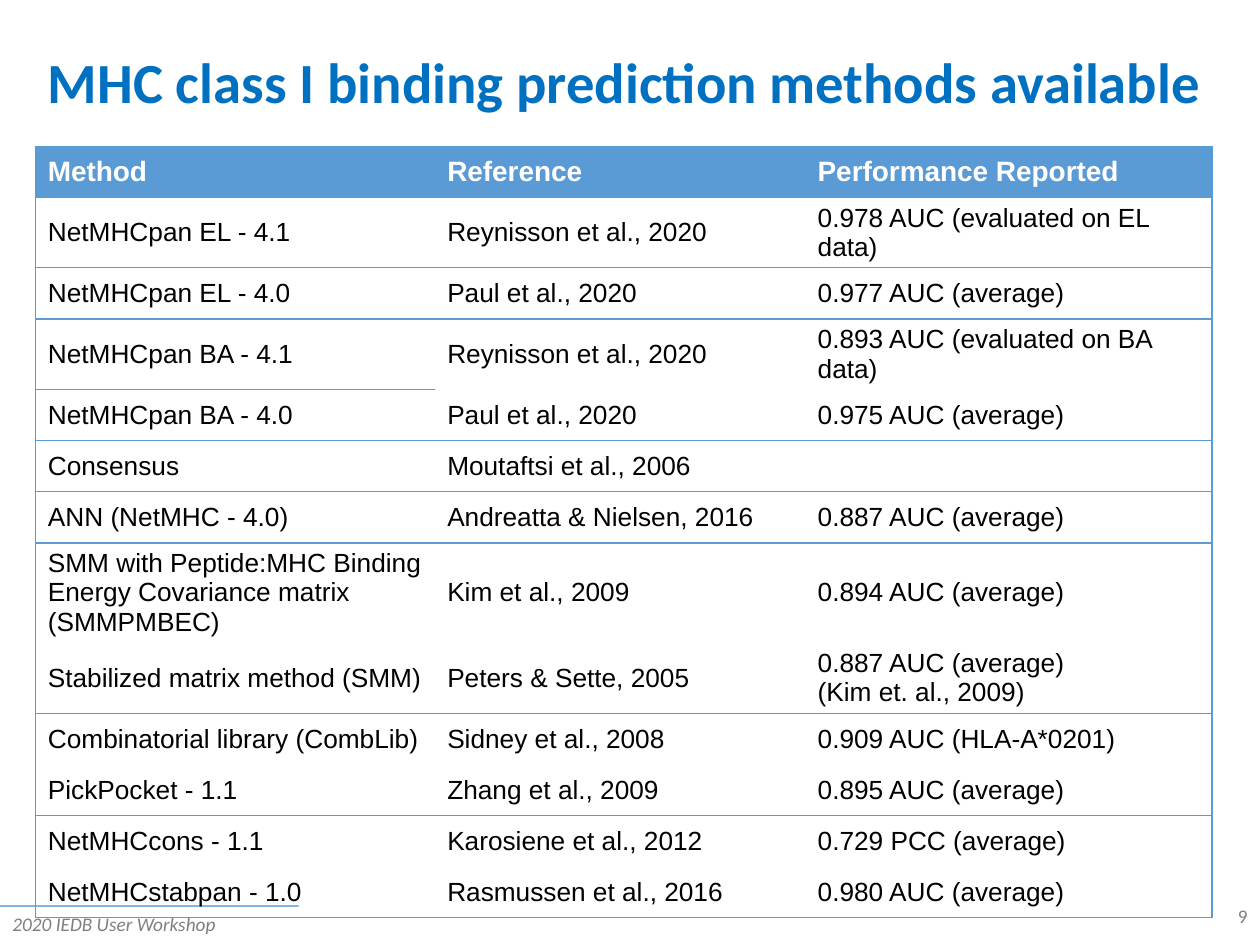
import pptx
import pptx.util
import pptx.dml.color
import pptx.enum.shapes
import pptx.enum.text
import pptx.oxml
import pptx.oxml.ns
from dataclasses import dataclass

Inches = pptx.util.Inches
Pt = pptx.util.Pt
RGB = pptx.dml.color.RGBColor.from_string
ALIGN = pptx.enum.text.PP_ALIGN
MIDDLE = pptx.enum.text.MSO_ANCHOR.MIDDLE
NSMAP = pptx.oxml.ns.nsdecls("a")


@dataclass(frozen=True)
class Theme:
    rule: str = "0070C0"
    grid: str = "5B9BD5"
    title = {"name": "Calibri", "size": Pt(32.4), "bold": True, "color": "0070C0"}
    head = {"name": "Arial", "size": Pt(16), "bold": True, "color": "FFFFFF"}
    body = {"name": "Arial", "size": Pt(15), "bold": False, "color": "000000"}
    page = {"name": "Calibri", "size": Pt(11), "color": "7F7F7F"}
    foot = {**page, "italic": True}


THEME = Theme()

ROWS = [
    ("Method", "Reference", "Performance Reported"),
    ("NetMHCpan EL - 4.1", "Reynisson et al., 2020", "0.978 AUC (evaluated on EL data)"),
    ("NetMHCpan EL - 4.0", "Paul et al., 2020", "0.977 AUC (average)"),
    ("NetMHCpan BA - 4.1", "Reynisson et al., 2020", "0.893 AUC (evaluated on BA data)"),
    ("NetMHCpan BA - 4.0", "Paul et al., 2020", "0.975 AUC (average)"),
    ("Consensus", "Moutaftsi et al., 2006", ""),
    ("ANN (NetMHC - 4.0)", "Andreatta & Nielsen, 2016", "0.887 AUC (average)"),
    ("SMM with Peptide:MHC Binding Energy Covariance matrix (SMMPMBEC)",
     "Kim et al., 2009", "0.894 AUC (average)"),
    ("Stabilized matrix method (SMM)", "Peters & Sette, 2005",
     "0.887 AUC (average)\n(Kim et. al., 2009)"),
    ("Combinatorial library (CombLib)", "Sidney et al., 2008", "0.909 AUC (HLA-A*0201)"),
    ("PickPocket - 1.1", "Zhang et al., 2009", "0.895 AUC (average)"),
    ("NetMHCcons - 1.1", "Karosiene et al., 2012", "0.729 PCC (average)"),
    ("NetMHCstabpan - 1.0", "Rasmussen et al., 2016", "0.980 AUC (average)"),
]
WIDTHS = [Inches(width) for width in (3.17, 2.94, 3.23)]
TALL = {1: 2, 3: 2, 7: 3, 8: 2}  # rows with more than one line of text
LINES = {1: Pt(29.2), 2: Pt(40.4), 3: Pt(57)}
HEIGHTS = [LINES[TALL.get(row, 1)] for row in range(len(ROWS))]
PADS = {"margin_top": Inches(0.02), "margin_bottom": Inches(0.02),
        "margin_left": Inches(0.1), "margin_right": Inches(0.08)}
OPEN = {7, 9, 11}  # rows with no rule below them


def style(para, look):
    for key, value in look.items():
        if key == "color":
            para.font.color.rgb = RGB(value)
        else:
            setattr(para.font, key, value)


def place(shape, box):
    for key, value in zip(("left", "top", "width", "height"), box):
        setattr(shape, key, Inches(value))


def add_title(slide, text, box):
    title = slide.shapes.title
    place(title, box)
    frame = title.text_frame
    frame.text = text
    frame.auto_size = pptx.enum.text.MSO_AUTO_SIZE.NONE
    frame.vertical_anchor = MIDDLE
    para = frame.paragraphs[0]
    para.alignment = ALIGN.LEFT
    para.line_spacing = 0.9
    style(para, THEME.title)


def add_label(slide, text, box, look, align):
    frame = slide.shapes.add_textbox(*map(Inches, box)).text_frame
    frame.word_wrap = True
    frame.text = text
    frame.paragraphs[0].alignment = align
    style(frame.paragraphs[0], look)


def add_rule(slide, start, end):
    kind = pptx.enum.shapes.MSO_CONNECTOR.STRAIGHT
    rule = slide.shapes.add_connector(kind, *map(Inches, start + end))
    rule.line.color.rgb = RGB(THEME.rule)
    rule.line.width = Pt(1)
    # Half transparent, no shadow
    tint = next(rule.line._get_or_add_ln().iter(pptx.oxml.ns.qn("a:srgbClr")))
    tint.append(pptx.oxml.parse_xml(f'<a:alpha {NSMAP} val="50000"/>'))
    rule._element.spPr.append(pptx.oxml.parse_xml(f"<a:effectLst {NSMAP}/>"))


def ruled(row, col):
    """Tell whether a line runs below this cell; row -1 is the top edge."""
    return row not in OPEN and (row != 3 or col == 0)


def set_edges(cell, edges):
    props = cell._tc.get_or_add_tcPr()
    for index, (side, shown) in enumerate(edges.items()):
        fill = (f'<a:solidFill><a:srgbClr val="{THEME.grid}"/></a:solidFill>'
                if shown else "<a:noFill/>")
        edge = f'<a:ln{side} {NSMAP} w="{Pt(0.75)}">{fill}</a:ln{side}>'
        props.insert(index, pptx.oxml.parse_xml(edge))


def fill_cell(cell, text, row, col):
    cell.text = text
    cell.vertical_anchor = MIDDLE
    for key, value in PADS.items():
        setattr(cell, key, value)
    for para in cell.text_frame.paragraphs:
        style(para, THEME.body if row else THEME.head)
    if row:
        cell.fill.background()
    else:
        cell.fill.solid()
        cell.fill.fore_color.rgb = RGB(THEME.grid)
    set_edges(cell, {"L": col == 0, "R": col == len(WIDTHS) - 1,
                     "T": ruled(row - 1, col), "B": ruled(row, col)})


def add_grid(slide, left, top):
    table = slide.shapes.add_table(
        len(ROWS), len(WIDTHS), Inches(left), Inches(top),
        sum(WIDTHS), sum(HEIGHTS)).table
    table.horz_banding = False
    for column, width in zip(table.columns, WIDTHS):
        column.width = width
    for row, texts in enumerate(ROWS):
        table.rows[row].height = HEIGHTS[row]
        for col, text in enumerate(texts):
            fill_cell(table.cell(row, col), text, row, col)


def main():
    deck = pptx.Presentation()
    deck.slide_width, deck.slide_height = Inches(10), Inches(7.5)
    slide = deck.slides.add_slide(deck.slide_layouts[5])

    # Title
    add_title(slide, "MHC class I binding prediction methods available",
              (0.28, 0.19, 9.42, 0.97))

    # Footer
    add_rule(slide, (0, 7.19), (2.37, 7.19))
    add_label(slide, "9", (7.75, 7.13, 2.25, 0.28), THEME.page, ALIGN.RIGHT)
    add_label(slide, "2020 IEDB User Workshop", (0, 7.19, 2.37, 0.28),
              THEME.foot, ALIGN.LEFT)

    # Table of methods
    add_grid(slide, 0.28, 1.16)

    deck.save("out.pptx")


if __name__ == "__main__":
    main()
